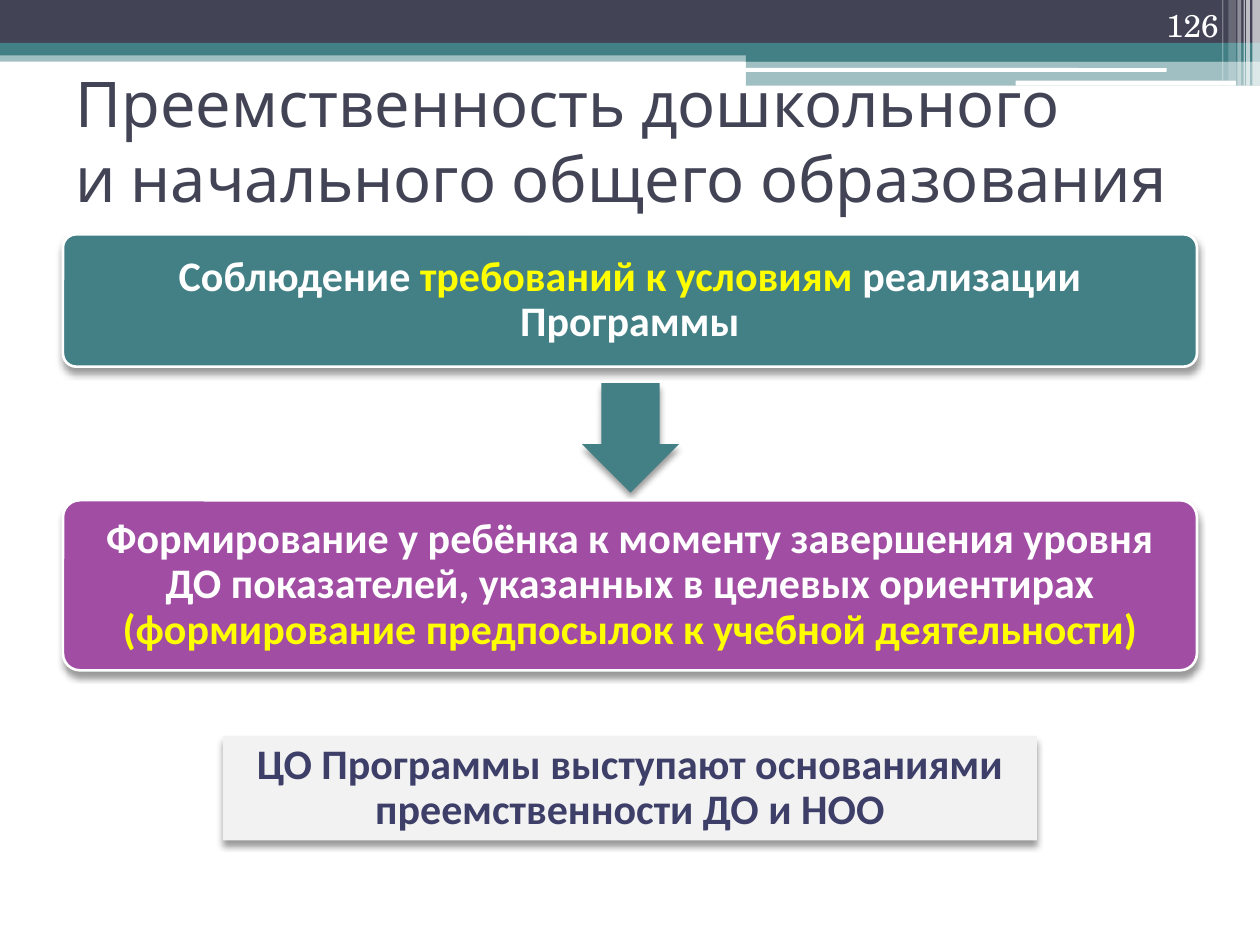
from dataclasses import dataclass
from typing import Optional

from lxml import etree
from pptx import Presentation, util as u
from pptx.dml.color import RGBColor
from pptx.enum import shapes, text
from pptx.oxml import ns

# Grid of 100 columns by 75 rows
COLS, ROWS = 100, 75
CELL = u.Inches(0.1)

WHITE = RGBColor(0xFF, 0xFF, 0xFF)
YELLOW = RGBColor(0xFF, 0xFF, 0x00)
SLATE = RGBColor(0x42, 0x44, 0x56)
TEAL = RGBColor(0x43, 0x80, 0x86)
PURPLE = RGBColor(0xA0, 0x4D, 0xA3)
PALE = RGBColor(0xF2, 0xF2, 0xF2)
INDIGO = RGBColor(0x3E, 0x3F, 0x68)

RECT = shapes.MSO_SHAPE.RECTANGLE
ROUND = shapes.MSO_SHAPE.ROUNDED_RECTANGLE
ARROW = shapes.MSO_SHAPE.DOWN_ARROW
LEFT, CENTER, RIGHT = text.PP_ALIGN.LEFT, text.PP_ALIGN.CENTER, text.PP_ALIGN.RIGHT
MIDDLE, BOTTOM = text.MSO_ANCHOR.MIDDLE, text.MSO_ANCHOR.BOTTOM


@dataclass
class Block:
    col: float
    row: float
    cols: float
    rows: float
    fill: RGBColor
    kind: int = RECT
    adj: tuple = ()
    alpha: int = 100
    border: Optional[RGBColor] = None
    shadow: bool = False


@dataclass
class Words:
    runs: list  # (text, colour) pairs
    font: str
    size: float
    align: int = CENTER
    anchor: int = MIDDLE
    bold: bool = False
    spacing: float = 1.0
    inset: tuple = (1, 0.5)  # sides, top and bottom in cells


def cells(*values: float) -> list:
    return [u.Emu(int(v * CELL)) for v in values]


def add_shadow(sp) -> None:
    effects = sp._element.spPr.find(ns.qn("a:effectLst"))
    shadow = etree.SubElement(effects, ns.qn("a:outerShdw"), blurRad=str(u.Pt(4)),
                              dist=str(u.Pt(3)), dir="5400000", rotWithShape="0")
    color = etree.SubElement(shadow, ns.qn("a:srgbClr"), val="000000")
    etree.SubElement(color, ns.qn("a:alpha"), val="40000")


def draw_block(s, b: Block):
    sp = s.shapes.add_shape(b.kind, *cells(b.col, b.row, b.cols, b.rows))
    for i, value in enumerate(b.adj):
        sp.adjustments[i] = value
    sp.fill.solid()
    sp.fill.fore_color.rgb = b.fill
    if b.alpha < 100:
        color = sp._element.spPr.find(ns.qn("a:solidFill"))[0]
        etree.SubElement(color, ns.qn("a:alpha"), val=str(b.alpha * 1000))
    if b.border is None:
        sp.line.fill.background()
    else:
        sp.line.color.rgb = b.border
        sp.line.width = u.Pt(1.5)
    sp.shadow.inherit = False
    if b.shadow:
        add_shadow(sp)
    return sp


def write(sp, w: Words) -> None:
    tf = sp.text_frame
    tf.word_wrap = True
    tf.vertical_anchor = w.anchor
    tf.margin_left, tf.margin_top = cells(*w.inset)
    tf.margin_right, tf.margin_bottom = cells(*w.inset)
    p = tf.paragraphs[0]
    p.alignment = w.align
    p.line_spacing = w.spacing
    p.font.name, p.font.size, p.font.bold = w.font, u.Pt(w.size), w.bold
    for i, (content, color) in enumerate(w.runs):
        for j, line in enumerate(content.split("\n")):
            if j:
                p.add_line_break()
            r = p.add_run()
            r.text = line
            r.font.color.rgb = color


def body(*runs: tuple, inset: tuple = (1, 1)) -> Words:
    return Words(list(runs), "Calibri", 24, bold=True, spacing=0.9, inset=inset)


# Header bands and the two white rules cut into them
BANDS = [
    Block(0, 4, COLS, 0.9, TEAL, alpha=50),
    Block(0, 0, COLS, 3.4, SLATE),
    Block(0, 3.4, COLS, 1, TEAL),
    Block(59.2, 3.9, 40.8, 1, TEAL),
    Block(59.2, 4.8, 40.8, 2, TEAL, alpha=50),
    Block(59.1, 5.4, 33.5, 0.3, WHITE, ROUND, (0.17,)),
    Block(80.6, 6.4, 17.5, 0.4, WHITE, ROUND, (0.17,)),
]

# Pale stripes at the right edge: column, width, height, opacity
STRIPES = [
    (99.4, 0.6, 6.8, 65), (98.9, 0.3, 6.8, 65), (98.7, 0.1, 6.8, 60),
    (98.2, 0.3, 6.8, 40), (97.5, 0.6, 6.4, 20), (97, 0.1, 6.4, 30),
]

# Title and page number: place and wording
LABELS = [
    ((5, 5.2, 90, 11.8),
     Words([("Преемственность дошкольного\nи начального общего образования", SLATE)],
           "Karla", 36, LEFT)),
    ((89.4, 0, 8.3, 4), Words([("126", WHITE)], "TeX Gyre Schola", 18, RIGHT, BOTTOM)),
]

# Flow from requirement to result, then the conclusion
FLOW = [
    (Block(5, 18.6, 90, 10.5, TEAL, ROUND, (0.1,), border=WHITE, shadow=True),
     body(("Соблюдение ", WHITE), ("требований к условиям ", YELLOW),
          ("реализации Программы", WHITE))),
    (Block(46.2, 30.4, 7.7, 8.7, TEAL, ARROW, (0.6, 0.5), shadow=True), None),
    (Block(5, 39.7, 90, 13.5, PURPLE, ROUND, (0.1,), border=WHITE, shadow=True),
     body(("Формирование у ребёнка к моменту завершения уровня ДО показателей, "
           "указанных в целевых ориентирах ", WHITE),
          ("(формирование предпосылок к учебной деятельности)", YELLOW))),
    (Block(17.7, 58.4, 64.6, 8.3, PALE, shadow=True),
     body(("ЦО Программы выступают основаниями преемственности ДО и НОО", INDIGO),
          inset=(1, 0.5))),
]


def main() -> None:
    prs = Presentation()
    prs.slide_width, prs.slide_height = cells(COLS, ROWS)
    s = prs.slides.add_slide(prs.slide_layouts[6])

    for band in BANDS:
        draw_block(s, band)
    for col, width, height, alpha in STRIPES:
        draw_block(s, Block(col, 0, width, height, WHITE, alpha=alpha))
    for place, words in LABELS:
        write(s.shapes.add_textbox(*cells(*place)), words)
    for block, words in FLOW:
        sp = draw_block(s, block)
        if words:
            write(sp, words)

    prs.save("out.pptx")


if __name__ == "__main__":
    main()
